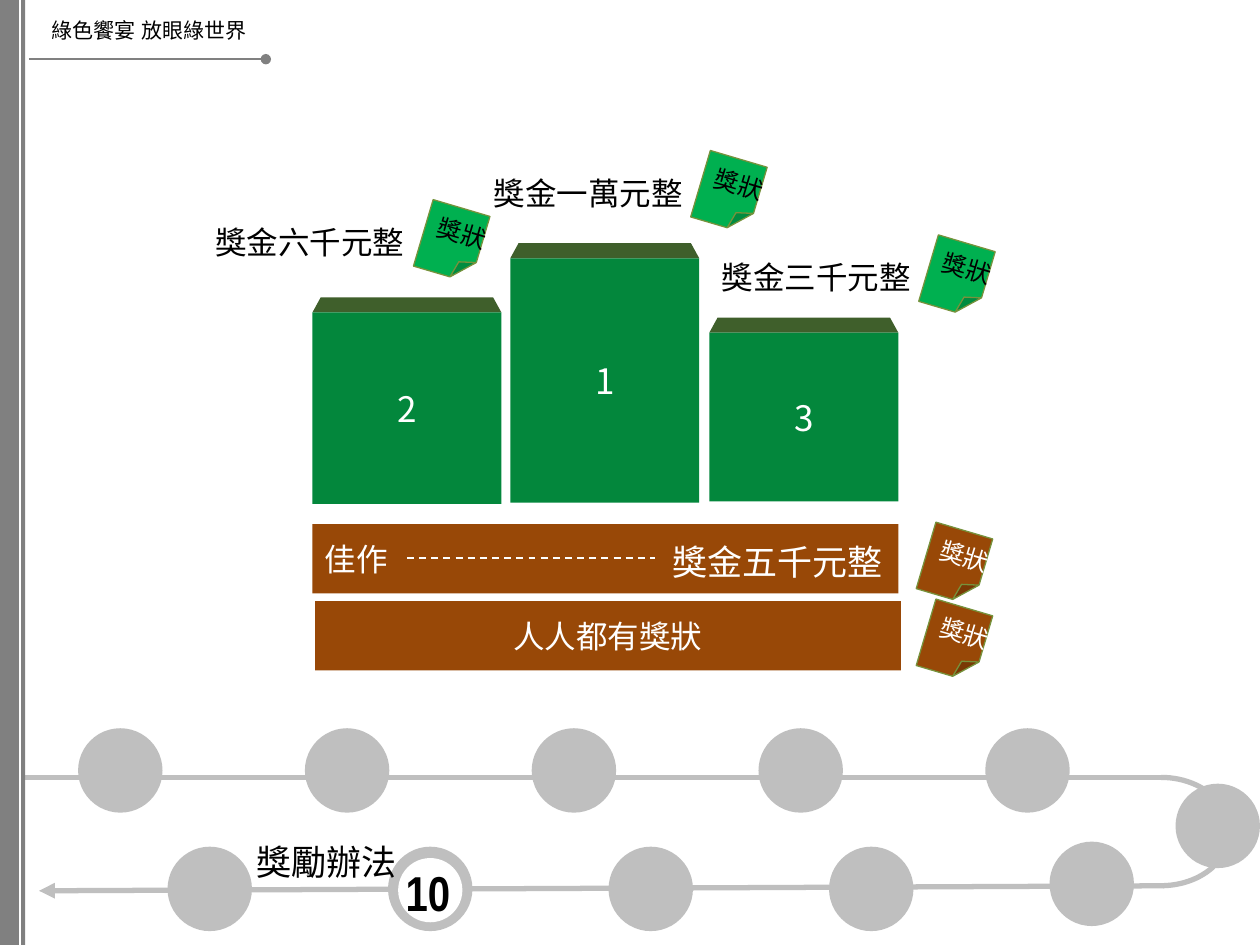
from lxml.etree import SubElement
from pptx import Presentation
from pptx.dml.color import RGBColor
from pptx.enum.dml import MSO_LINE as Dash
from pptx.enum.shapes import MSO_CONNECTOR as Link, MSO_SHAPE as Kind
from pptx.enum.text import MSO_ANCHOR as Anchor, PP_ALIGN as Align
from pptx.oxml.ns import qn
from pptx.util import Inches, Pt

HUES = {"gray": "808080", "pale": "BFBFBF", "white": "FFFFFF", "black": "000000",
        "front": "03873C", "top": "3F5F2B", "leaf": "00B050", "wood": "984807", "edge": "76923C"}
CJK = "Noto Sans CJK SC"
HEAD = "綠色饗宴 放眼綠世界"
TITLE = "獎勵辦法"
PAGE = "10"
CERT = "獎狀"
PRIZES = [
    ("3", (5.63, 2.52, 1.46), "獎金三千元整", (5.63, 2), (7.36, 1.92)),
    ("1", (4.05, 1.93, 2.06), "獎金一萬元整", (3.82, 1.33), (5.55, 1.25)),
    ("2", (2.48, 2.36, 1.64), "獎金六千元整", (1.61, 1.72), (3.35, 1.64)),
]
BARS = [("佳作", 2.48, 4.16, Align.LEFT), ("人人都有獎狀", 2.5, 4.77, Align.CENTER)]
MERIT = "獎金五千元整"
DOT, LIP, STEP = 0.67, 0.12, 1.5

deck = Presentation()
deck.slide_width, deck.slide_height = Inches(10), Inches(7.5)
slide = deck.slides.add_slide(deck.slide_layouts[5])
shapes = slide.shapes


def tone(name):
    """Return the named colour."""
    return RGBColor.from_string(HUES[name])


def write(shape, text, size, hue="black", font=CJK, align=Align.LEFT,
          anchor=Anchor.MIDDLE, wrap=False, bold=False):
    """Put one formatted line of text in a shape."""
    frame = shape.text_frame
    frame.text = text
    for key, value in {"word_wrap": wrap, "vertical_anchor": anchor}.items():
        setattr(frame, key, value)
    para = frame.paragraphs[0]
    para.alignment = align
    run = para.runs[0]
    for key, value in {"size": Pt(size), "name": font, "bold": bold}.items():
        setattr(run.font, key, value)
    run.font.color.rgb = tone(hue)
    SubElement(run.font._element, qn("a:ea")).set("typeface", font)


def label(text, x, y, w, h, size, **style):
    """Add a text box."""
    box = shapes.add_textbox(*map(Inches, (x, y, w, h)))
    write(box, text, size, anchor=Anchor.TOP, wrap=True, **style)


def block(kind, x, y, w, h, fill=None, line=None, width=0.75):
    """Add a flat preset shape."""
    shape = shapes.add_shape(kind, *map(Inches, (x, y, w, h)))
    shape.shadow.inherit = False
    for part, hue in ((shape.fill, fill), (shape.line.fill, line)):
        if hue:
            part.solid()
            part.fore_color.rgb = tone(hue)
        else:
            part.background()
    if line:
        shape.line.width = Pt(width)
    return shape


def rule(start, end, hue, width, tips=(), dash=None):
    """Add a straight line with optional tips."""
    line = shapes.add_connector(Link.STRAIGHT, *map(Inches, start + end))
    line.line.color.rgb = tone(hue)
    line.line.width = Pt(width)
    if dash:
        line.line.dash_style = dash
    for tag, tip in tips:
        SubElement(line.line._get_or_add_ln(), qn(tag)).set("type", tip)
    SubElement(line._element.spPr, qn("a:effectLst"))


def sheet(x, y, fill, hue):
    """Add a tilted certificate."""
    note = block(Kind.FOLDED_CORNER, x, y, 0.47, 0.55, fill, "edge")
    guides = next(note._element.iter(qn("a:avLst")))
    for key, value in {"name": "adj", "fmla": "val 35700"}.items():
        guide = guides.find(qn("a:gd"))
        if guide is None:
            guide = SubElement(guides, qn("a:gd"))
        guide.set(key, value)
    note.rotation = 16.5
    write(note, CERT, 14, hue)


def track():
    """Draw the side bar, header and winding path."""
    rule((0, 6.17), (9.22, 6.17), "pale", 3)
    block(Kind.RECTANGLE, 0, 0, 0.2, 7.5, "gray")
    rule((0.16, 7.5), (0.16, 0), "white", 1)
    rule((0.23, 0.47), (2.11, 0.47), "gray", 1, [("a:tailEnd", "oval")])
    label(HEAD, 0.31, 0.09, 1.95, 0.3, 12, font="Arial")
    rule((0.31, 7.07), (9.24, 7.03), "pale", 3, [("a:headEnd", "triangle")])
    bend = block(Kind.ARC, 8.67, 6.17, 1.09, 0.86, None, "pale", 3)
    bend.adjustments[0], bend.adjustments[1] = 162, 52.55
    upper = [(0.62 + 1.8 * i, 5.78) for i in range(5)]
    lower = [(1.33 + 1.75 * i, 6.72 if i < 4 else 6.68) for i in range(5)]
    for x, y in upper + lower + [(9.33, 6.22)]:
        block(Kind.OVAL, x, y, DOT, DOT, "pale")


def podium():
    """Draw the three ranked steps."""
    for rank, (x, y, high), prize, spot, cert in PRIZES:
        lid = block(Kind.TRAPEZOID, x, y, STEP, LIP, "top")
        lid.adjustments[0] = 0.55
        face = block(Kind.RECTANGLE, x, y + LIP, STEP, high - LIP, "front")
        write(face, rank, 20, "white", align=Align.CENTER)
        sheet(*cert, "leaf", "black")
        label(prize, *spot, 1.89, 0.4, 18)


def merits():
    """Draw the two wide award bars."""
    for text, x, y, align in BARS:
        bar = block(Kind.RECTANGLE, x, y, 4.65, 0.55, "wood")
        write(bar, text, 18, "white", align=align)
        sheet(7.34, y + 0.04, "wood", "white")
    label(MERIT, 5.24, 4.24, 1.89, 0.43, 20, hue="white")
    rule((3.23, 4.43), (5.2, 4.43), "white", 1, dash=Dash.DASH)


def name():
    """Place the title and the page mark."""
    title = shapes.title
    spot = {"left": 1.67, "top": 6.56, "width": 1.84, "height": 0.56}
    for key, value in spot.items():
        setattr(title, key, Inches(value))
    write(title, TITLE, 20, align=Align.CENTER, wrap=True)
    shapes._spTree.append(title._element)
    block(Kind.OVAL, 3.16, 6.81, 0.51, 0.51, "white")
    label(PAGE, 3.12, 6.8, 0.78, 0.57, 28, font="Arial Narrow", bold=True)


track()
podium()
merits()
name()
deck.save("out.pptx")
